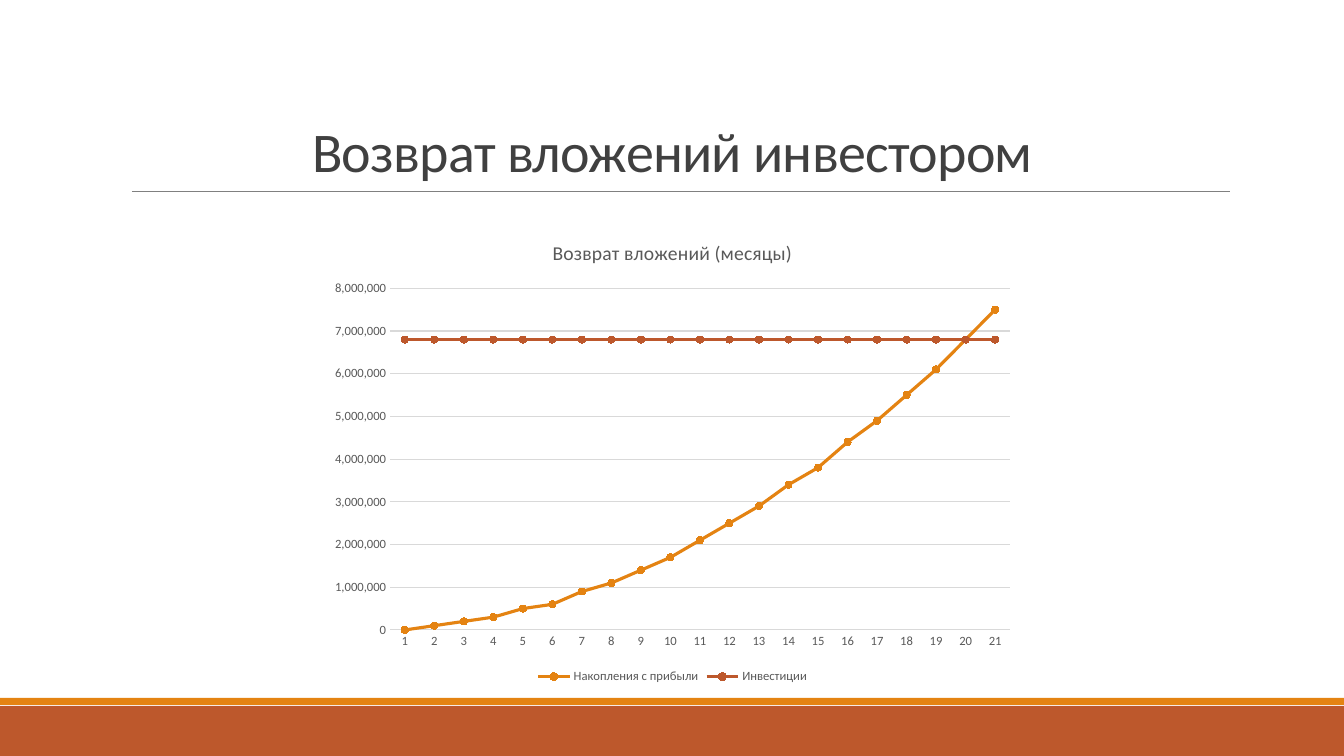
from pptx import Presentation
from pptx import util as u
from pptx.chart.data import CategoryChartData
from pptx.dml.color import RGBColor
from pptx.enum import chart as ch, dml, shapes, text
from pptx.oxml.ns import qn
from lxml import etree

PX = 914400 / 100.8
ORANGE = RGBColor(0xE4, 0x83, 0x12)
RUST = RGBColor(0xBD, 0x58, 0x2C)
GRAY = RGBColor(0x80, 0x80, 0x80)
DARK = RGBColor(0x40, 0x40, 0x40)
LABEL = RGBColor(0x59, 0x59, 0x59)
GRID = RGBColor(0xD9, 0xD9, 0xD9)


def px(*nums):
    return [u.Emu(round(n * PX)) for n in nums]


def style(font, size, color):
    font.name = "Calibri"
    font.size = u.Pt(size)
    font.bold = False
    font.color.rgb = color


deck = Presentation()
deck.slide_width, deck.slide_height = px(1344, 756)
slide = deck.slides.add_slide(deck.slide_layouts[5])

# Footer bands
for top, high, color in [(706, 50, RUST), (698, 7, ORANGE)]:
    band = slide.shapes.add_shape(shapes.MSO_SHAPE.RECTANGLE, *px(0, top, 1344, high))
    band.shadow.inherit = False
    band.fill.solid()
    band.fill.fore_color.rgb = color
    band.line.fill.background()

# Rule under the title
rule = slide.shapes.add_connector(shapes.MSO_CONNECTOR.STRAIGHT, *px(132, 191, 1230, 191))
rule.line.color.rgb = GRAY
rule.line.width = u.Pt(0.5)
etree.SubElement(rule._element.spPr, qn("a:effectLst"))

# Title
title = slide.shapes.title
title.left, title.top, title.width, title.height = px(118, 29, 1109, 160)
frame = title.text_frame
frame.text = "Возврат вложений инвестором"
frame.word_wrap = True
frame.auto_size = text.MSO_AUTO_SIZE.NONE
frame.vertical_anchor = text.MSO_ANCHOR.BOTTOM
para = frame.paragraphs[0]
para.alignment = text.PP_ALIGN.CENTER
para.line_spacing = 0.85
style(para.runs[0].font, 40, DARK)
para.runs[0].font._element.set("spc", "-50")

# Chart data
profit = [0, 0.1, 0.2, 0.3, 0.5, 0.6, 0.9, 1.1, 1.4, 1.7, 2.1,
          2.5, 2.9, 3.4, 3.8, 4.4, 4.9, 5.5, 6.1, 6.8, 7.5]
data = CategoryChartData(number_format="#,##0")
data.categories = [str(n + 1) for n in range(len(profit))]
data.add_series("Накопления с прибыли", [round(v * 1_000_000) for v in profit])
data.add_series("Инвестиции", [6_800_000] * len(profit))

# Chart with title and legend
chart = slide.shapes.add_chart(
    ch.XL_CHART_TYPE.LINE_MARKERS, *px(321, 221, 703, 467), data).chart
style(chart.font, 10, LABEL)
chart.has_title = True
head = chart.chart_title.text_frame
head.text = "Возврат вложений (месяцы)"
style(head.paragraphs[0].runs[0].font, 14, LABEL)
chart.chart_title.include_in_layout = False
chart.has_legend = True
chart.legend.position = ch.XL_LEGEND_POSITION.BOTTOM
chart.legend.include_in_layout = False
style(chart.legend.font, 9, LABEL)

# Axes
months, money = chart.category_axis, chart.value_axis
for axis in (months, money):
    axis.major_tick_mark = axis.minor_tick_mark = ch.XL_TICK_MARK.NONE
    style(axis.tick_labels.font, 9, LABEL)
money.minimum_scale = 0
money.maximum_scale = 8_000_000
money.major_unit = 1_000_000
money.tick_labels.number_format = "#,##0"
money.tick_labels.number_format_is_linked = False
money.format.line.fill.background()
for line in (months.format.line, money.major_gridlines.format.line):
    line.color.rgb = GRID
    line.width = u.Pt(0.75)

# Series
plot = chart.plots[0]
plot.vary_by_categories = False
for row, color in zip(plot.series, [ORANGE, RUST]):
    row.smooth = False
    row.format.line.color.rgb = color
    row.format.line.width = u.Pt(2.25)
    mark = row.marker
    mark.style = ch.XL_MARKER_STYLE.CIRCLE
    mark.size = 5
    mark.format.fill.solid()
    mark.format.fill.fore_color.rgb = color
    mark.format.line.color.rgb = color

deck.save("out.pptx")
